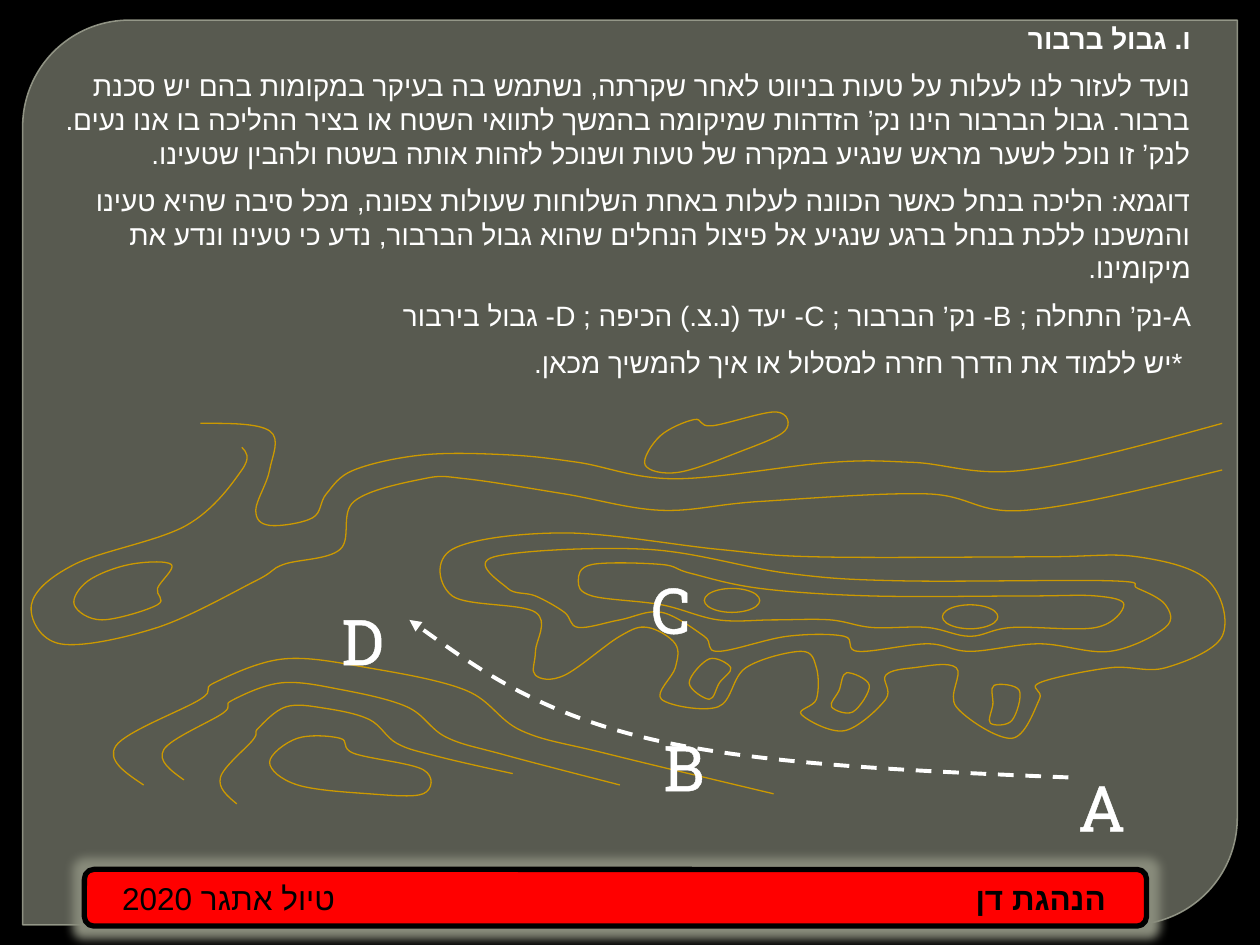
"""Build the Hebrew navigation slide with its contour map and footer bar."""
from lxml import etree
from pptx import Presentation
from pptx.dml.color import RGBColor
from pptx.enum.dml import MSO_LINE
from pptx.enum.shapes import MSO_SHAPE
from pptx.enum.text import MSO_ANCHOR, PP_ALIGN
from pptx.oxml.ns import qn
from pptx.util import Inches, Pt

LEFT, RIGHT = PP_ALIGN.LEFT, PP_ALIGN.RIGHT
MIDDLE, DASH = MSO_ANCHOR.MIDDLE, MSO_LINE.DASH
PANEL, BAR, OVAL = MSO_SHAPE.ROUND_2_DIAG_RECTANGLE, MSO_SHAPE.ROUNDED_RECTANGLE, MSO_SHAPE.OVAL
COLORS = {"black": "000000", "white": "FFFFFF", "panel": "888B7B", "edge": "9DA090",
          "contour": "CC9900", "red": "FF0000"}
RGB = {name: RGBColor.from_string(value) for name, value in COLORS.items()}


def add_text(tf, text, size=16, font="Arial", color="white", bold=False,
             align=RIGHT, before=0, outline=False):
    """Add one right-to-left paragraph to a text frame."""
    p = tf.add_paragraph() if tf.text else tf.paragraphs[0]
    p.alignment, p.space_before = align, Pt(before)
    pPr = p._p.get_or_add_pPr()
    pPr.set("rtl", "1")
    r = p.add_run()
    r.text = text
    r.font.size, r.font.name, r.font.bold = Pt(size), font, bold
    r.font.color.rgb = RGB[color]
    rPr = r._r.get_or_add_rPr()
    etree.SubElement(rPr, qn("a:cs"), typeface="Arial")
    if outline:
        ln = etree.Element(qn("a:ln"), w=str(Pt(0.75)))
        fill = etree.SubElement(ln, qn("a:solidFill"))
        etree.SubElement(fill, qn("a:srgbClr"), val=COLORS[color])
        rPr.insert(0, ln)


def add_curve(shapes, anchors, closed=False, color="contour", width=0.75):
    """Draw a smooth curve through the anchors, with tangents from their neighbours."""
    n = len(anchors)
    tangents = [[(anchors[(i + 1) % n][k] - anchors[i - 1][k]) / 6 for k in (0, 1)]
                for i in range(n)]
    points = []
    for i in range(n if closed else n - 1):
        j = (i + 1) % n
        c1 = [a + t for a, t in zip(anchors[i], tangents[i])]
        c2 = [a - t for a, t in zip(anchors[j], tangents[j])]
        if not closed and i == 0:
            c1 = [(a + c) / 2 for a, c in zip(anchors[i], c2)]
        if not closed and j == n - 1:
            c2 = [(a + c) / 2 for a, c in zip(anchors[j], c1)]
        points += [c1, c2, anchors[j]]
    x, y = anchors[0]
    builder = shapes.build_freeform(Inches(x), Inches(y))
    builder.add_line_segments([(Inches(x), Inches(y)) for x, y in points], close=closed)
    sp = builder.convert_to_shape()
    lines = list(sp.element.iter(qn("a:lnTo")))
    for i in range(0, len(lines), 3):
        bezier = etree.Element(qn("a:cubicBezTo"))
        lines[i].addprevious(bezier)
        for line in lines[i:i + 3]:
            bezier.append(line[0])
            line.getparent().remove(line)
    sp.shadow.inherit = False
    sp.fill.background()
    sp.line.color.rgb, sp.line.width = RGB[color], Pt(width)
    return sp


prs = Presentation()
prs.slide_width, prs.slide_height = Inches(10), Inches(7.5)
s = prs.slides.add_slide(prs.slide_layouts[6])
s.background.fill.solid()
s.background.fill.fore_color.rgb = RGB["black"]

panel = s.shapes.add_shape(PANEL, Inches(0.18), Inches(0.16), Inches(9.64), Inches(7.18))
panel.adjustments[0], panel.adjustments[1] = 0.118, 0
panel.shadow.inherit = False
panel.fill.solid()
panel.fill.fore_color.rgb = RGB["panel"]
panel.line.color.rgb, panel.line.width = RGB["edge"], Pt(0.87)
for clr, alpha in zip(list(panel.element.spPr.iter(qn("a:srgbClr"))), (65000, 88000)):
    etree.SubElement(clr, qn("a:alpha"), val=str(alpha))

body = s.shapes.add_textbox(Inches(0.33), Inches(0.12), Inches(9.22), Inches(2.79))
body.text_frame.word_wrap = True
add_text(body.text_frame, "ו. גבול ברבור", bold=True)
for text in (
    "נועד לעזור לנו לעלות על טעות בניווט לאחר שקרתה, נשתמש בה בעיקר במקומות בהם יש סכנת ברבור. "
    "גבול הברבור הינו נק’ הזדהות שמיקומה בהמשך לתוואי השטח או בציר ההליכה בו אנו נעים. "
    "לנק’ זו נוכל לשער מראש שנגיע במקרה של טעות ושנוכל לזהות אותה בשטח ולהבין שטעינו.",
    "דוגמא: הליכה בנחל כאשר הכוונה לעלות באחת השלוחות שעולות צפונה, מכל סיבה שהיא טעינו "
    "והמשכנו ללכת בנחל ברגע שנגיע אל פיצול הנחלים שהוא גבול הברבור, נדע כי טעינו ונדע את מיקומינו.",
    "A-נק’ התחלה ; B- נק’ הברבור ; C- יעד (נ.צ.) הכיפה ; D- גבול בירבור",
    " *יש ללמוד את הדרך חזרה למסלול או איך להמשיך מכאן.",
):
    add_text(body.text_frame, text, before=8)

open_contours = [
    [(1.14, 6.23), (0.92, 5.92), (1.59, 5.55), (1.7, 5.42), (2.25, 5.23), (2.92, 5.3),
     (3.7, 5.48), (4.14, 5.8), (4.81, 5.98), (6.14, 6.3)],
    [(1.46, 6.19), (1.3, 5.95), (1.77, 5.66), (1.84, 5.56), (2.23, 5.42), (2.69, 5.47),
     (3.23, 5.61), (3.54, 5.85), (4, 5.99), (4.92, 6.23)],
    [(1.88, 6.38), (1.75, 6.17), (2.01, 5.87), (2.05, 5.78), (2.27, 5.61), (2.57, 5.62),
     (2.93, 5.71), (3.15, 5.9), (3.46, 6), (4.07, 6.14)],
    [(1.92, 3.55), (1.92, 3.73), (1.48, 4.17), (0.59, 4.48), (0.25, 4.8), (0.48, 5.11),
     (1.25, 4.98), (2.03, 4.61), (2.25, 4.48), (2.7, 4.36), (2.81, 3.98), (3.36, 3.8),
     (3.7, 3.8), (4.48, 3.92), (5.25, 4.05), (6.03, 3.98), (7.36, 3.92), (8.14, 4.05),
     (9.7, 3.73)],
    [(1.59, 3.36), (2.14, 3.42), (2.14, 3.73), (2.03, 4.05), (2.14, 4.17), (2.48, 4.11),
     (2.59, 3.92), (2.81, 3.73), (3.36, 3.61), (4.03, 3.61), (4.59, 3.67), (5.36, 3.8),
     (6.59, 3.67), (7.25, 3.67), (8.14, 3.73), (9.7, 3.36)],
]
closed_contours = [
    [(2.36, 6.23), (2.14, 6.05), (2.36, 5.86), (2.7, 5.86), (2.81, 5.98), (3.36, 6.11),
     (3.36, 6.3), (2.92, 6.3)],
    [(1.36, 4.48), (1.03, 4.48), (0.7, 4.61), (0.59, 4.8), (0.81, 4.92), (1.25, 4.8),
     (1.25, 4.67)],
    [(5.38, 3.75), (5.12, 3.69), (5.24, 3.46), (5.51, 3.33), (5.65, 3.38), (6.16, 3.27),
     (6.23, 3.42), (5.86, 3.59)],
    [(9.25, 5.3), (9.7, 5.05), (9.59, 4.61), (9.03, 4.42), (8.25, 4.42), (6.48, 4.42),
     (5.7, 4.36), (4.48, 4.23), (3.59, 4.36), (3.59, 4.73), (4.25, 4.86), (4.25, 5.17),
     (4.25, 5.36), (4.48, 5.36), (4.92, 5.05), (5.14, 4.98), (5.36, 5.11), (5.36, 5.3),
     (5.25, 5.55), (5.7, 5.61), (5.92, 5.3), (6.36, 5.17), (6.48, 5.3), (6.48, 5.55),
     (6.36, 5.67), (6.7, 5.8), (7.03, 5.55), (7.03, 5.36), (7.25, 5.3), (7.59, 5.3),
     (7.59, 5.61), (8.03, 5.86), (8.25, 5.55), (8.25, 5.42), (8.81, 5.3)],
    [(8.81, 4.61), (7.14, 4.61), (6.25, 4.55), (5.14, 4.36), (3.92, 4.42), (4.03, 4.67),
     (4.25, 4.73), (4.48, 4.86), (4.59, 4.98), (4.92, 4.92), (5.25, 4.86), (5.59, 5.05),
     (5.7, 5.17), (6.25, 5.05), (6.7, 5.05), (6.81, 5.17), (7.36, 5.11), (7.7, 5.17),
     (8.25, 5.11), (8.81, 5.17), (9.25, 4.98), (9.25, 4.8), (9.03, 4.67)],
    [(5.25, 4.48), (4.7, 4.48), (4.59, 4.61), (4.7, 4.73), (5.25, 4.8), (5.7, 4.92),
     (6.14, 4.92), (6.59, 4.92), (6.92, 4.98), (7.36, 4.98), (7.7, 5.05), (8.03, 4.98),
     (8.7, 4.98), (8.92, 4.8), (8.7, 4.73), (8.14, 4.73), (6.92, 4.73), (6.03, 4.67),
     (5.48, 4.55)],
    [(5.63, 5.23), (5.8, 5.3), (5.71, 5.42), (5.63, 5.55), (5.47, 5.42)],
    [(6.77, 5.65), (6.6, 5.61), (6.66, 5.48), (6.72, 5.34), (6.9, 5.44)],
    [(8.03, 5.72), (7.86, 5.74), (7.88, 5.59), (7.89, 5.44), (8.09, 5.48)],
]
contour_map = s.shapes.add_group_shape()
for anchors in open_contours:
    add_curve(contour_map.shapes, anchors)
for anchors in closed_contours:
    add_curve(contour_map.shapes, anchors, closed=True)
for x, y in ((5.59, 4.67), (7.48, 4.8)):
    hill = contour_map.shapes.add_shape(OVAL, Inches(x), Inches(y), Inches(0.44), Inches(0.19))
    hill.shadow.inherit = False
    hill.fill.background()
    hill.line.color.rgb, hill.line.width = RGB["contour"], Pt(0.75)
for letter, x, y in (("A", 8.59, 6.05), ("B", 5.25, 5.73), ("C", 5.14, 4.48), ("D", 2.7, 4.73)):
    label = contour_map.shapes.add_textbox(Inches(x), Inches(y), Inches(0.44), Inches(0.21))
    label.text_frame.word_wrap = False
    add_text(label.text_frame, letter, size=36, font="Roboto Slab", outline=True)

route = add_curve(contour_map.shapes, [(8.48, 6.17), (5.14, 5.86), (3.25, 4.92)],
                  color="white", width=2.25)
route.line.dash_style = DASH
etree.SubElement(route.element.spPr.find(qn("a:ln")), qn("a:tailEnd"), type="triangle")

bar = s.shapes.add_shape(BAR, Inches(0.67), Inches(6.9), Inches(8.43), Inches(0.45))
bar.shadow.inherit = False
bar.fill.solid()
bar.fill.fore_color.rgb = RGB["red"]
bar.line.color.rgb, bar.line.width = RGB["black"], Pt(3)
glow = etree.SubElement(bar.element.spPr.find(qn("a:effectLst")), qn("a:glow"), rad=str(Pt(11)))
etree.SubElement(glow, qn("a:srgbClr"), val=COLORS["panel"])
trip = s.shapes.add_textbox(Inches(0.67), Inches(6.9), Inches(3), Inches(0.45))
for sp, text, bold, align in ((bar, "הנהגת דן", True, RIGHT), (trip, "טיול אתגר 2020", False, LEFT)):
    tf = sp.text_frame
    tf.word_wrap, tf.vertical_anchor = True, MIDDLE
    tf.margin_left = tf.margin_right = Inches(0.3)
    add_text(tf, text, size=18, font="Roboto Slab", color="black", bold=bold, align=align)

prs.save("out.pptx")
